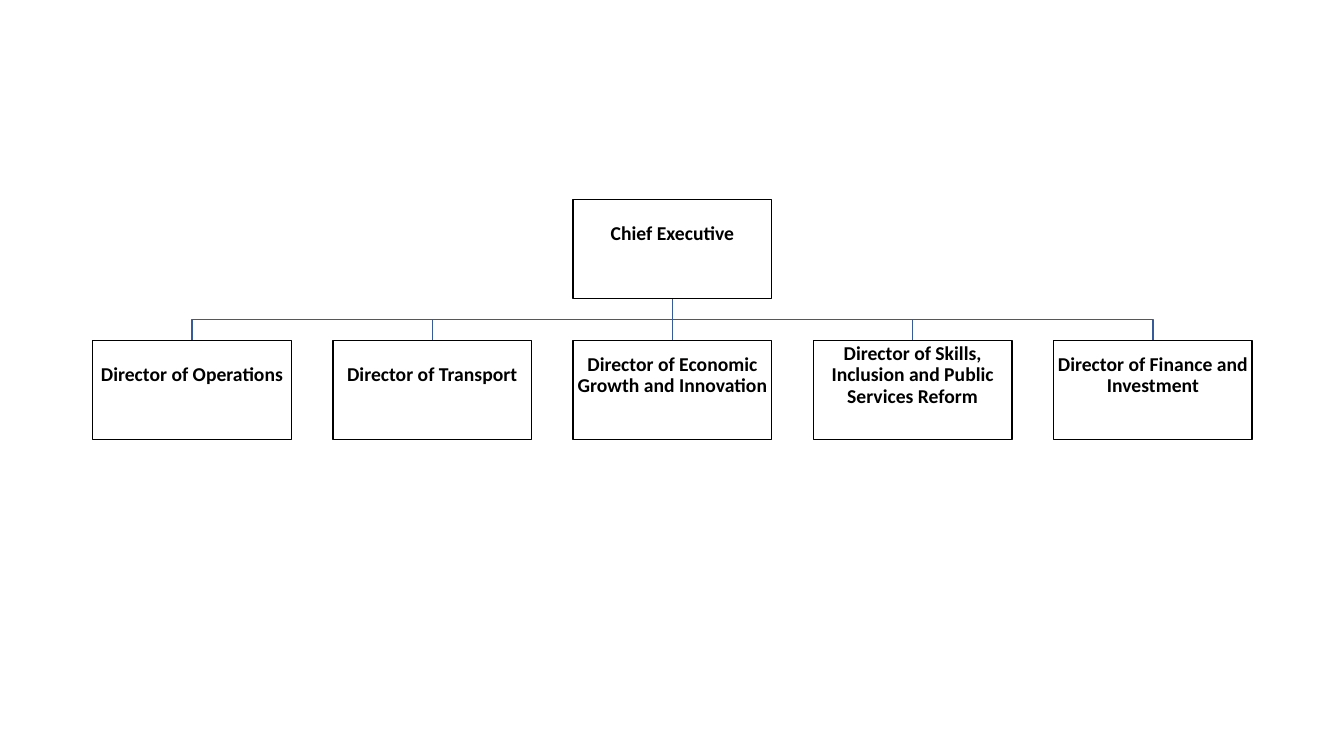
from pptx import Presentation
from pptx.dml.color import RGBColor
from pptx.enum.shapes import MSO_CONNECTOR, MSO_SHAPE
from pptx.enum.text import MSO_ANCHOR, PP_ALIGN
from pptx.util import Inches, Pt
from lxml.etree import SubElement
from pptx.oxml.ns import qn

CHIEF = "Chief Executive"
DIRECTORS = [
    "Director of Operations",
    "Director of Transport",
    "Director of Economic Growth and Innovation",
    "Director of Skills, Inclusion and Public Services Reform",
    "Director of Finance and Investment",
]
POST_WIDTH, POST_HEIGHT = 1.97, 0.98
BLACK, BLUE = "000000", "365B9D"


def color(hex_code):
    """Return the colour for a hex string."""
    return RGBColor.from_string(hex_code)


def style_line(line, hex_code):
    """Give a line its colour and one-point width."""
    line.color.rgb = color(hex_code)
    line.width = Pt(1)


def add_post(slide, title, left, top):
    """Draw one outlined post with its title set above the middle."""
    post = slide.shapes.add_shape(
        MSO_SHAPE.RECTANGLE, Inches(left), Inches(top),
        Inches(POST_WIDTH), Inches(POST_HEIGHT))
    post.shadow.inherit = False
    post.fill.background()
    style_line(post.line, BLACK)
    frame = post.text_frame
    frame.word_wrap = True
    frame.vertical_anchor = MSO_ANCHOR.MIDDLE
    frame.margin_left = frame.margin_right = frame.margin_top = Inches(0.01)
    frame.margin_bottom = Inches(0.3)
    label = frame.paragraphs[0]
    label.text = title
    label.alignment = PP_ALIGN.CENTER
    label.line_spacing = 0.9
    label.font.name = "Calibri"
    label.font.size = Pt(14)
    label.font.bold = True
    label.font.color.rgb = color(BLACK)


def add_branch(slide, start_x, start_y, end_x, end_y):
    """Link a post to one below it, stepping sideways halfway down."""
    if abs(start_x - end_x) < 0.01:
        branch = slide.shapes.add_connector(
            MSO_CONNECTOR.STRAIGHT, Inches(start_x), Inches(start_y),
            Inches(start_x), Inches(end_y))
        SubElement(branch._element.spPr, qn("a:effectLst"))
    else:
        middle_y = (start_y + end_y) / 2
        outline = slide.shapes.build_freeform(Inches(start_x), Inches(start_y))
        corners = [(start_x, middle_y), (end_x, middle_y), (end_x, end_y)]
        outline.add_line_segments(
            [(Inches(x), Inches(y)) for x, y in corners], close=False)
        branch = outline.convert_to_shape()
        branch.shadow.inherit = False
        branch.fill.background()
    style_line(branch.line, BLUE)


def add_org_chart(slide, left, top, width, height):
    """Place the chief above an evenly spaced row of directors."""
    pitch = (width - POST_WIDTH) / (len(DIRECTORS) - 1)
    center = left + width / 2
    row_top = top + height - POST_HEIGHT
    lefts = [left + index * pitch for index in range(len(DIRECTORS))]
    for director_left in lefts:
        add_branch(slide, center, top + POST_HEIGHT,
                   director_left + POST_WIDTH / 2, row_top)
    add_post(slide, CHIEF, center - POST_WIDTH / 2, top)
    for title, director_left in zip(DIRECTORS, lefts):
        add_post(slide, title, director_left, row_top)


def main():
    """Build and save the slide."""
    deck = Presentation()
    deck.slide_width, deck.slide_height = Inches(13.33), Inches(7.5)
    slide = deck.slides.add_slide(deck.slide_layouts[6])
    add_org_chart(slide, 0.92, 1.98, 11.5, 2.38)
    deck.save("out.pptx")


if __name__ == "__main__":
    main()
